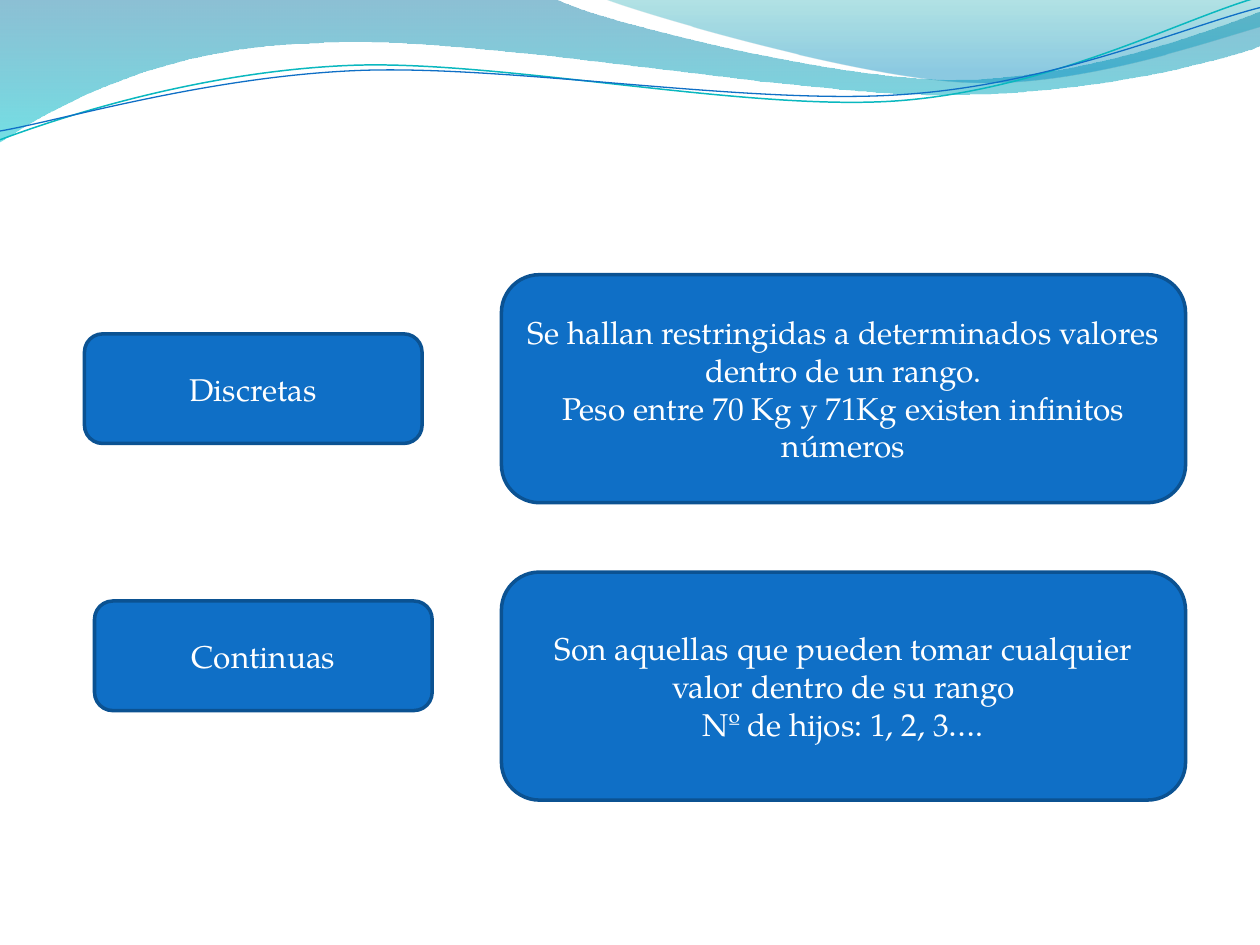
import dataclasses
import math

import lxml.etree
import pptx
import pptx.dml.color
import pptx.enum.shapes
import pptx.enum.text
import pptx.oxml.ns
import pptx.util

Inches = pptx.util.Inches
Pt = pptx.util.Pt
qn = pptx.oxml.ns.qn


@dataclasses.dataclass(frozen=True)
class Theme:
    font: str = "TeX Gyre Pagella"
    text_size: float = 18
    text: str = "FFFFFF"
    box: str = "0F6FC6"
    box_edge: str = "0B5292"
    edge_width: float = 2
    # Gradient stops: position, colour, opacity in percent
    wide_wave: tuple = ((0, "0074A1", 45), (1, "00C6CF", 55))
    corner_wave: tuple = ((0, "00A1A9", 30), (0.8, "008BBF", 45))
    teal_line: tuple = ("0AB8BF", 0.85)
    blue_line: tuple = ("0F6FC6", 0.75)


THEME = Theme()
WIDTH, HEIGHT = 10, 7.5
LINE_TILT = -2.7  # degrees

# Two columns of boxes, in inches
TERM_SIZE = (2.68, 0.87)
TERM_CORNERS = ((0.67, 2.65), (0.75, 4.77))
MEANING_SIZE = (5.43, 1.81)
MEANING_CORNERS = ((3.98, 2.18), (3.98, 4.54))

TERMS = (("Discretas",), ("Continuas",))
MEANINGS = (
    ("Se hallan restringidas a determinados valores dentro de un rango.",
     "Peso entre 70 Kg y 71Kg existen infinitos números"),
    ("Son aquellas que pueden tomar cualquier valor dentro de su rango",
     "Nº de hijos: 1, 2, 3…."),
)

# Frames (left, top, width, height) and outlines. An outline is a start,
# then straight steps (x, y) or curves (two handles and an end).
WIDE_WAVE = (-0.01, -0.01, 10.02, 1.14), (
    (0, 0), (4.4, -0.01),
    (4.76, 0.17, 6.64, 0.63, 7.58, 0.63), (8.53, 0.63, 9.58, 0.26, 10, 0.09),
    (10.01, 0.36),
    (9.83, 0.44, 8.7, 0.76, 7.46, 0.75), (6.22, 0.75, 3.82, 0.28, 2.57, 0.34),
    (1.29, 0.36, 0.46, 0.83, -0.01, 1.13), (0, 0),
)
CORNER_WAVE = (4.79, -0.01, 5.21, 0.7), (
    (4.79, -0.01),
    (5.09, 0.11, 6.82, 0.62, 7.69, 0.65), (8.56, 0.69, 9.61, 0.32, 10, 0.21),
    (10, 0), (4.79, -0.01),
)
TEAL_LINE = (-0.02, 0.22, 10.02, 0.71), (
    (0, 1.11),
    (0.48, 0.93, 1.58, 0.57, 2.77, 0.52), (3.95, 0.47, 5.93, 0.89, 7.13, 0.8),
    (8.33, 0.71, 9.38, 0.15, 9.98, -0.02),
)
BLUE_LINE = (-0.02, 0.3, 10.03, 0.58), (
    (0, 1.04),
    (0.47, 0.96, 1.64, 0.61, 2.83, 0.56), (4.03, 0.51, 5.97, 0.84, 7.17, 0.75),
    (8.36, 0.67, 9.41, 0.21, 10, 0.06),
)


def rgb(color):
    return pptx.dml.color.RGBColor.from_string(color)


def to_frame(x, y, frame, tilt):
    """Place a slide point in the frame as it lies before being tilted."""
    left, top, width, height = frame
    dx, dy = x - left - width / 2, y - top - height / 2
    cos, sin = math.cos(math.radians(tilt)), math.sin(math.radians(tilt))
    return (dx * cos + dy * sin + width / 2,
            dy * cos - dx * sin + height / 2)


def add_outline(slide, frame, outline, close, tilt=0):
    ends = [(Inches(part[-2]), Inches(part[-1])) for part in outline]
    builder = slide.shapes.build_freeform(*ends[0])
    builder.add_line_segments(ends[1:], close=close)
    shape = builder.convert_to_shape()
    shape.shadow.inherit = False
    shape.left, shape.top, shape.width, shape.height = map(Inches, frame)
    shape.rotation = tilt

    # Rewrite the straight steps as curves within the frame
    route = next(shape.element.iter(qn("a:path")))
    for child in list(route):
        route.remove(child)
    route.set("w", str(shape.width))
    route.set("h", str(shape.height))
    for index, part in enumerate(outline):
        tag = "a:cubicBezTo" if len(part) == 6 else "a:lnTo"
        step = lxml.etree.SubElement(route, qn(tag if index else "a:moveTo"))
        for x, y in zip(part[::2], part[1::2]):
            px, py = to_frame(x, y, frame, tilt)
            lxml.etree.SubElement(step, qn("a:pt"),
                                  x=str(Inches(px)), y=str(Inches(py)))
    if close:
        lxml.etree.SubElement(route, qn("a:close"))
    return shape


def add_wave(slide, frame, outline, stops):
    wave = add_outline(slide, frame, outline, close=True)
    wave.line.fill.background()
    wave.fill.gradient()
    wave.fill.gradient_angle = 270  # counter-clockwise: runs downwards
    for stop, (position, color, _) in zip(wave.fill.gradient_stops, stops):
        stop.position = position
        stop.color.rgb = rgb(color)
    colors = list(wave.element.spPr.iter(qn("a:srgbClr")))
    for color, (_, _, opacity) in zip(colors, stops):
        lxml.etree.SubElement(color, qn("a:alpha"), val=str(opacity * 1000))


def add_wave_line(slide, frame, outline, style):
    color, width = style
    curve = add_outline(slide, frame, outline, close=False, tilt=LINE_TILT)
    curve.fill.background()
    curve.line.color.rgb = rgb(color)
    curve.line.width = Pt(width)


def add_box(slide, corner, size, paragraphs):
    box = slide.shapes.add_shape(
        pptx.enum.shapes.MSO_SHAPE.ROUNDED_RECTANGLE,
        *map(Inches, corner + size))
    box.shadow.inherit = False
    box.fill.solid()
    box.fill.fore_color.rgb = rgb(THEME.box)
    box.line.color.rgb = rgb(THEME.box_edge)
    box.line.width = Pt(THEME.edge_width)

    frame = box.text_frame
    frame.word_wrap = True
    frame.vertical_anchor = pptx.enum.text.MSO_ANCHOR.MIDDLE
    for index, text in enumerate(paragraphs):
        paragraph = frame.add_paragraph() if index else frame.paragraphs[0]
        paragraph.alignment = pptx.enum.text.PP_ALIGN.CENTER
        run = paragraph.add_run()
        run.text = text
        run.font.name = THEME.font
        run.font.size = Pt(THEME.text_size)
        run.font.color.rgb = rgb(THEME.text)


def main():
    deck = pptx.Presentation()
    deck.slide_width, deck.slide_height = Inches(WIDTH), Inches(HEIGHT)
    slide = deck.slides.add_slide(deck.slide_layouts[6])

    # Waves along the top edge
    add_wave(slide, *WIDE_WAVE, THEME.wide_wave)
    add_wave(slide, *CORNER_WAVE, THEME.corner_wave)
    add_wave_line(slide, *TEAL_LINE, THEME.teal_line)
    add_wave_line(slide, *BLUE_LINE, THEME.blue_line)

    # Kinds of variable on the left, their meanings on the right
    for corner, term in zip(TERM_CORNERS, TERMS):
        add_box(slide, corner, TERM_SIZE, term)
    for corner, meaning in reversed(list(zip(MEANING_CORNERS, MEANINGS))):
        add_box(slide, corner, MEANING_SIZE, meaning)

    deck.save("out.pptx")


if __name__ == "__main__":
    main()
